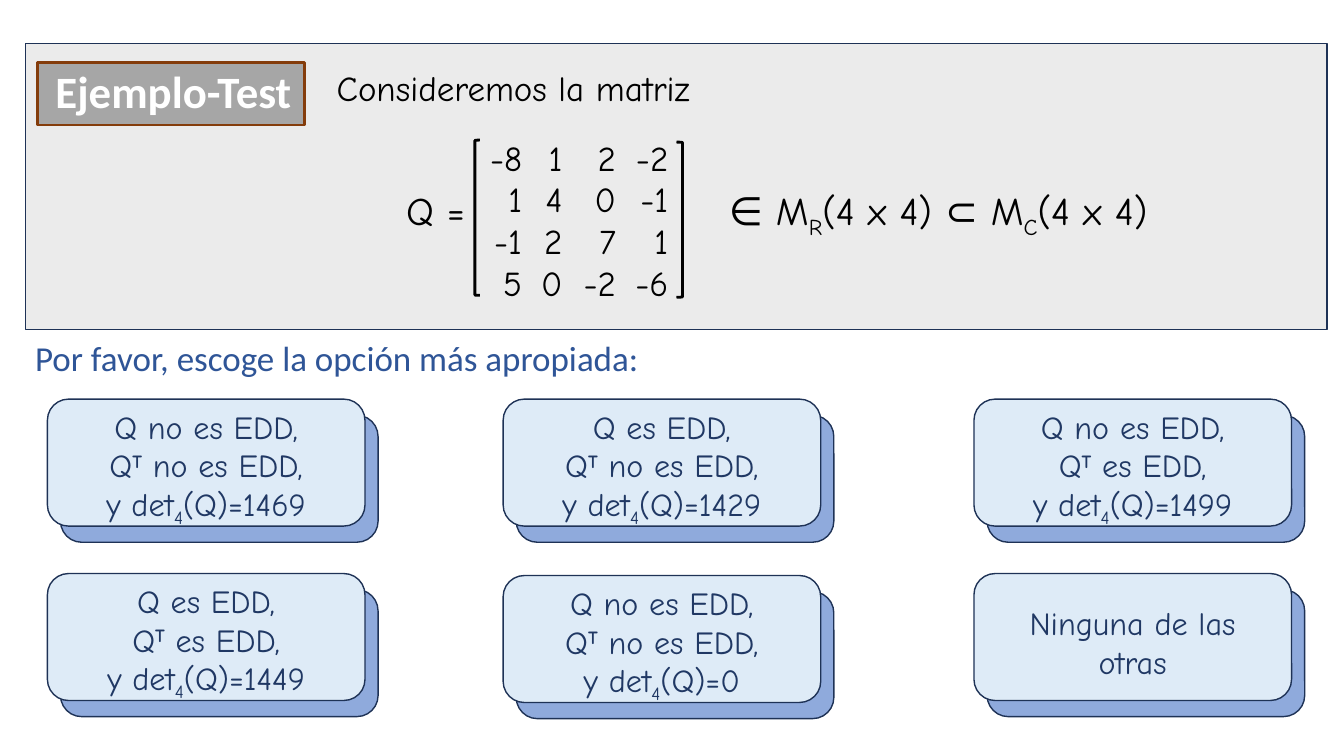
from dataclasses import dataclass
from typing import Any, NamedTuple

from lxml.etree import SubElement
from pptx import Presentation
from pptx.dml.color import RGBColor
from pptx.enum.shapes import MSO_SHAPE as Shape
from pptx.enum.text import MSO_ANCHOR as Anchor, PP_ALIGN as Align
from pptx.oxml.ns import qn
from pptx.util import Inches, Pt

BLACK = RGBColor(0x00, 0x00, 0x00)
WHITE = RGBColor(0xFF, 0xFF, 0xFF)
PANEL_GRAY = RGBColor(0xD9, 0xD9, 0xD9)
TITLE_GRAY = RGBColor(0xA6, 0xA6, 0xA6)
BROWN = RGBColor(0x84, 0x3C, 0x0B)
OUTLINE = RGBColor(0x1E, 0x32, 0x56)
PROMPT_BLUE = RGBColor(0x2F, 0x55, 0x97)
CARD_BLUE = RGBColor(0xDE, 0xEB, 0xF7)
CARD_BACK = RGBColor(0x8F, 0xAA, 0xDC)
CARD_TEXT = RGBColor(0x20, 0x38, 0x64)

COMIC, CALIBRI = "Comic Neue", "Calibri"
CARD_W, CARD_H = 3.15, 1.26
BACK_DX, BACK_DY = 0.13, 0.16
MATRIX = [(-8, 1, 2, -2), (1, 4, 0, -1), (-1, 2, 7, 1), (5, 0, -2, -6)]
MATRIX_TABS = (0.37, 0.77, 1.3, 1.82)


class Part(NamedTuple):
    text: str
    baseline: int = 0
    bold: bool = False


Line = list[Part]


class Style(NamedTuple):
    font: str
    size: float
    color: RGBColor
    bold: bool = False


@dataclass
class Option:
    left: float
    top: float
    lines: list[Line]


def edd_lines(q: str, transposed: str, det: int) -> list[Line]:
    return [
        [Part(f"Q {q} EDD,")],
        [Part("Q"), Part("T", 30, True), Part(f" {transposed} EDD,")],
        [Part("y det"), Part("4", -25), Part(f"(Q)={det}")],
    ]


OPTIONS = [
    Option(0.47, 3.96, edd_lines("no es", "no es", 1469)),
    Option(4.99, 3.96, edd_lines("es", "no es", 1429)),
    Option(9.66, 3.96, edd_lines("no es", "es", 1499)),
    Option(0.47, 5.69, edd_lines("es", "es", 1449)),
    Option(4.99, 5.71, edd_lines("no es", "no es", 0)),
    Option(9.66, 5.69, [[Part("Ninguna de las otras")]]),
]


def set_all(target: Any, values: dict[str, Any]) -> None:
    for name, value in values.items():
        setattr(target, name, value)


def paint(sp: Any, fill: RGBColor | None, line: RGBColor, width: float) -> None:
    if fill is None:
        sp.fill.background()
    else:
        sp.fill.solid()
        sp.fill.fore_color.rgb = fill
    sp.line.color.rgb = line
    sp.line.width = Pt(width)
    sp.shadow.inherit = False


def add_shape(s: Any, kind: Shape, box: tuple[float, ...], fill: RGBColor | None,
              line: RGBColor, width: float = 1) -> Any:
    sp = s.shapes.add_shape(kind, *map(Inches, box))
    paint(sp, fill, line, width)
    return sp


def write(tf: Any, lines: list[Line], style: Style, align: Align = Align.LEFT,
          spacing: float = 1.0) -> None:
    for i, line in enumerate(lines):
        p = tf.paragraphs[0] if i == 0 else tf.add_paragraph()
        set_all(p, {"alignment": align, "line_spacing": spacing})
        for part in line:
            r = p.add_run()
            r.text = part.text
            set_all(r.font, {"name": style.font, "size": Pt(style.size),
                             "bold": style.bold or part.bold})
            r.font.color.rgb = style.color
            if part.baseline:
                r.font._element.set("baseline", str(part.baseline * 1000))


def add_text(s: Any, box: tuple[float, ...], lines: list[Line], style: Style,
             spacing: float = 1.0) -> Any:
    tf = s.shapes.add_textbox(*map(Inches, box)).text_frame
    tf.word_wrap = True
    write(tf, lines, style, spacing=spacing)
    return tf


def set_tabs(tf: Any, stops: tuple[float, ...], align: str) -> None:
    for p in tf.paragraphs:
        tabs = SubElement(p._p.get_or_add_pPr(), qn("a:tabLst"))
        for stop in stops:
            SubElement(tabs, qn("a:tab"), pos=str(Inches(stop)), algn=align)


def add_title(s: Any) -> None:
    title = s.shapes.title
    set_all(title, {"left": Inches(0.37), "top": Inches(0.62),
                    "width": Inches(2.65), "height": Inches(0.62)})
    paint(title, TITLE_GRAY, BROWN, 2)
    tf = title.text_frame
    set_all(tf, {"margin_left": Inches(0.18), "margin_right": 0,
                 "vertical_anchor": Anchor.MIDDLE, "word_wrap": True})
    write(tf, [[Part("Ejemplo-Test")]], Style(CALIBRI, 32, WHITE, True), spacing=0.9)
    s.shapes.element.append(title.element)


def add_matrix(s: Any) -> None:
    tf = add_text(s, (3.93, 1.8, 7.78, 0.56), [[
        Part("Q =\t∈ M"), Part("R", -25), Part("(4 x 4) ⊂ M"),
        Part("C", -25), Part("(4 x 4)")]], Style(COMIC, 28, BLACK))
    set_tabs(tf, (3.2,), "l")
    add_shape(s, Shape.RIGHT_BRACKET, (6.71, 1.41, 0.06, 1.54), None, BLACK, 2)
    add_shape(s, Shape.LEFT_BRACKET, (4.71, 1.39, 0.05, 1.54), None, BLACK, 2)
    rows = [[Part("".join(f"\t{value}" for value in row))] for row in MATRIX]
    tf = add_text(s, (4.71, 1.3, 3.32, 1.78), rows, Style(COMIC, 25, BLACK))
    set_tabs(tf, MATRIX_TABS, "r")


def add_option(s: Any, option: Option) -> None:
    left, top = option.left, option.top
    add_shape(s, Shape.ROUNDED_RECTANGLE,
              (left + BACK_DX, top + BACK_DY, CARD_W, CARD_H), CARD_BACK, OUTLINE)
    card = add_shape(s, Shape.ROUNDED_RECTANGLE, (left, top, CARD_W, CARD_H),
                     CARD_BLUE, OUTLINE)
    tf = card.text_frame
    set_all(tf, {"margin_top": Inches(0.1), "margin_bottom": 0,
                 "vertical_anchor": Anchor.MIDDLE, "word_wrap": True})
    write(tf, option.lines, Style(COMIC, 23, CARD_TEXT), Align.CENTER)


def main() -> None:
    prs = Presentation()
    set_all(prs, {"slide_width": Inches(13.33), "slide_height": Inches(7.5)})
    s = prs.slides.add_slide(prs.slide_layouts.get_by_name("Title Only"))

    panel = add_shape(s, Shape.RECTANGLE, (0.25, 0.43, 12.91, 2.84), PANEL_GRAY, OUTLINE)
    color = panel.element.spPr.find(f"{qn('a:solidFill')}/{qn('a:srgbClr')}")
    SubElement(color, qn("a:alpha"), val="50000")
    add_text(s, (3.24, 0.66, 9.03, 0.5), [[Part("Consideremos la matriz")]],
             Style(COMIC, 25, BLACK), spacing=0.9)
    add_title(s)
    add_text(s, (0.25, 3.29, 9.59, 0.52),
             [[Part("Por favor, escoge la opción más apropiada:")]],
             Style(CALIBRI, 25, PROMPT_BLUE))
    add_matrix(s)
    for option in OPTIONS:
        add_option(s, option)
    prs.save("out.pptx")


if __name__ == "__main__":
    main()
